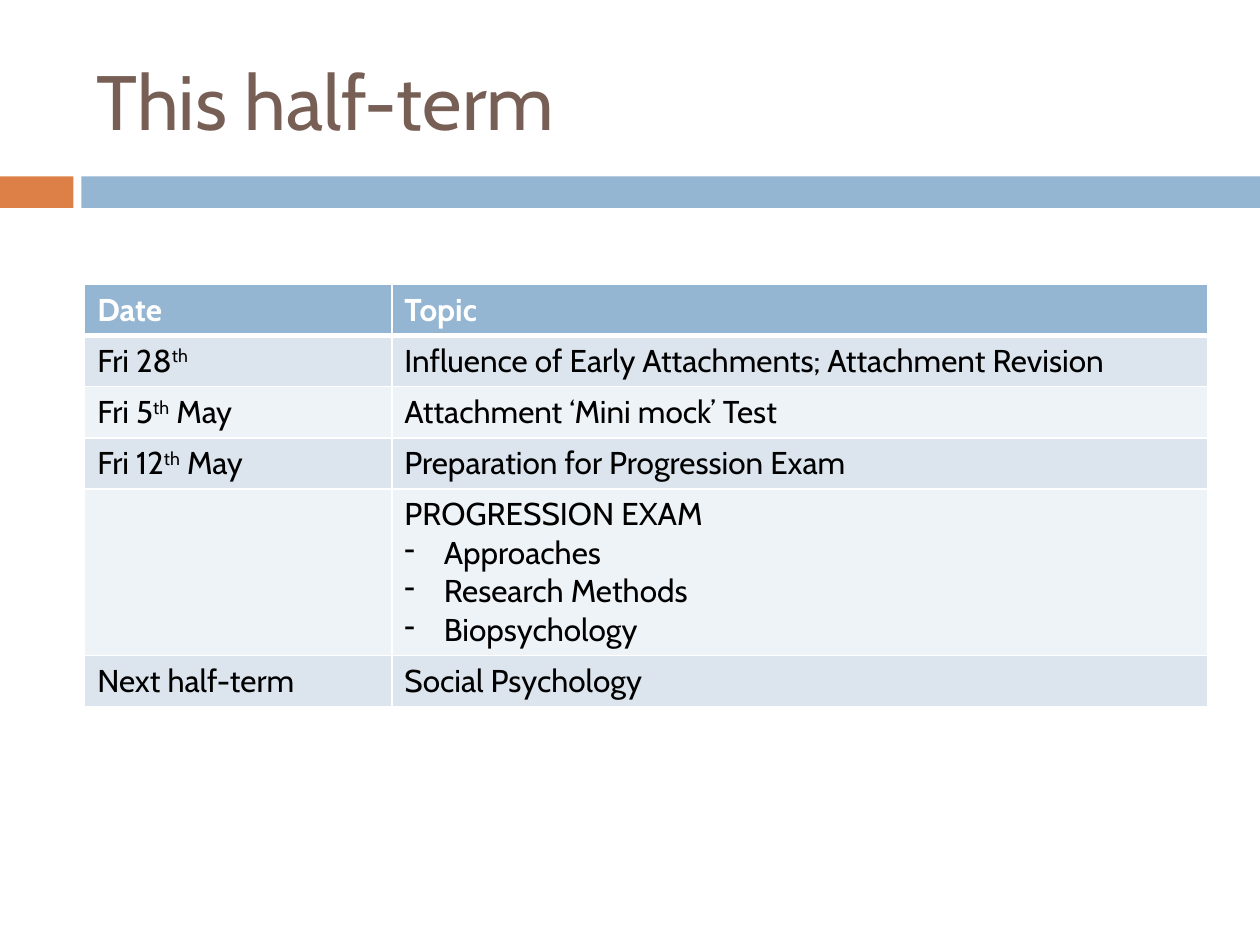
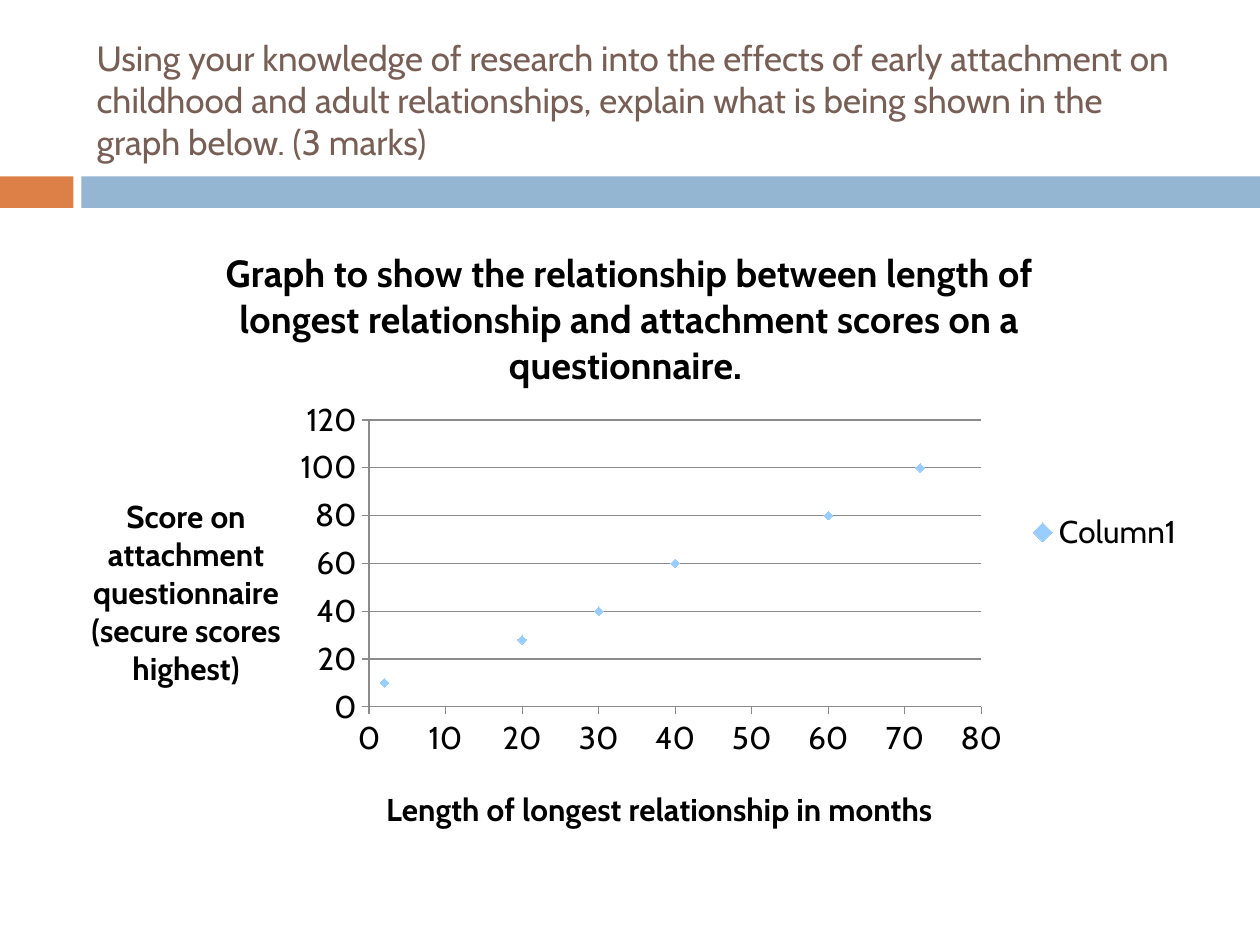
from lxml.etree import SubElement
from pptx import Presentation
from pptx.chart.data import XyChartData
from pptx.dml.color import RGBColor
from pptx.enum.chart import XL_CHART_TYPE, XL_LEGEND_POSITION, XL_MARKER_STYLE, XL_TICK_MARK
from pptx.enum.shapes import MSO_SHAPE
from pptx.enum.text import MSO_ANCHOR, MSO_AUTO_SIZE, PP_ALIGN
from pptx.oxml import parse_xml
from pptx.oxml.ns import nsdecls, qn
from pptx.util import Pt

FONT = "Cabin"
COLORS = {
    "title": "775F55", "orange": "DD8047", "blue": "94B6D2", "white": "FFFFFF",
    "black": "000000", "odd_row": "DCE5EE", "even_row": "EEF3F7",
    "grid": "8B8B8B", "marker": "99CCFF",
}

# Bands under the title: left, width, colour
BANDS = [(0, 42, "orange"), (46.5, 673.5, "blue")]
BAND_TOP, BAND_HEIGHT = 100.8, 18
TITLE_BOX = (48, 18, 642, 78)

# A pair of ^ marks encloses superscript; a leading "- " makes a dash item
TERM_TITLE = "This half-term"
TERM_ROWS = [
    ("Date", ["Topic"]),
    ("Fri 28^th^", ["Influence of Early Attachments; Attachment Revision"]),
    ("Fri 5^th^ May", ["Attachment ‘Mini mock’ Test"]),
    ("Fri 12^th^ May", ["Preparation for Progression Exam"]),
    ("", ["PROGRESSION EXAM", "- Approaches", "- Research Methods", "- Biopsychology"]),
    ("Next half-term", ["Social Psychology"]),
]
TABLE_LEFT, TABLE_TOP = 48.4, 162.6
COLUMN_WIDTHS = (175.5, 466.5)
LINE_HEIGHT, CELL_PADDING = 22, 7.2
DASH_INDENT = 22.5

QUESTION = (
    "Using your knowledge of research into the effects of early attachment on "
    "childhood and adult relationships, explain what is being shown in the graph "
    "below. (3 marks)"
)
CHART_BOX = (36, 126, 648, 356.4)
CHART_TITLE = (
    "Graph to show the relationship between length of longest relationship "
    "and attachment scores on a questionnaire. "
)
MONTHS_TITLE = "Length of longest relationship in months"
SCORE_TITLE = "Score on attachment questionnaire (secure scores highest)"
SERIES_NAME = "Column1"
POINTS = [(72, 100), (2, 10), (40, 60), (20, 28), (60, 80), (30, 40)]  # months, score
# Places inside the chart, as shares of its width and height
PLOT_PLACE = {"x": 0.27, "y": 0.32, "w": 0.54, "h": 0.46}
MONTHS_PLACE = {"x": 0.28, "y": 0.9}
SCORE_PLACE = {"x": 0.02, "y": 0.43}


def color(name):
    return RGBColor.from_string(COLORS[name])


def points(values):
    return [Pt(value) for value in values]


def write(para, text, size=18, fill="black", bold=False):
    """Add text to a paragraph, raising the parts between ^ marks."""
    for index, part in enumerate(text.split("^")):
        if not part:
            continue
        span = para.add_run()
        span.text = part
        span.font.name = FONT
        span.font.size = Pt(size)
        span.font.bold = bold
        span.font.color.rgb = color(fill)
        if index % 2:
            span.font._element.set("baseline", "30000")


def add_page(deck, title, size):
    page = deck.slides.add_slide(deck.slide_layouts[5])
    for left, width, fill in BANDS:
        band = page.shapes.add_shape(
            MSO_SHAPE.RECTANGLE, *points((left, BAND_TOP, width, BAND_HEIGHT)))
        band.shadow.inherit = False
        band.fill.solid()
        band.fill.fore_color.rgb = color(fill)
        band.line.fill.background()
    box = page.shapes.title
    box.left, box.top, box.width, box.height = points(TITLE_BOX)
    frame = box.text_frame
    frame.word_wrap = True
    frame.auto_size = MSO_AUTO_SIZE.NONE
    frame.vertical_anchor = MSO_ANCHOR.MIDDLE
    frame.paragraphs[0].alignment = PP_ALIGN.LEFT
    write(frame.paragraphs[0], title, size=size, fill="title")
    return page


def add_dash(para):
    properties = para._p.get_or_add_pPr()
    properties.set("marL", str(Pt(DASH_INDENT)))
    properties.set("indent", str(-Pt(DASH_INDENT)))
    SubElement(properties, qn("a:buChar")).set("char", "-")


def set_borders(cell, **widths):
    """Draw white borders; widths are keyed by side: L, R, T, B."""
    properties = cell._tc.get_or_add_tcPr()
    for index, side in enumerate("LRTB"):
        properties.insert(index, parse_xml(
            f'<a:ln{side} {nsdecls("a")} w="{Pt(widths.get(side, 1))}"><a:solidFill>'
            f'<a:srgbClr val="{COLORS["white"]}"/></a:solidFill></a:ln{side}>'))


def fill_cell(cell, lines, row_index):
    header = row_index == 0
    for index, line in enumerate(lines):
        frame = cell.text_frame
        para = frame.add_paragraph() if index else frame.paragraphs[0]
        if line.startswith("- "):
            add_dash(para)
        write(para, line.removeprefix("- "), bold=header, fill="white" if header else "black")
    cell.fill.solid()
    cell.fill.fore_color.rgb = color(
        "blue" if header else "odd_row" if row_index % 2 else "even_row")
    set_borders(cell, B=3 if header else 1, T=3 if row_index == 1 else 1)


def add_term_table(page):
    heights = [len(topics) * LINE_HEIGHT + CELL_PADDING for _, topics in TERM_ROWS]
    table = page.shapes.add_table(
        len(TERM_ROWS), len(COLUMN_WIDTHS),
        *points((TABLE_LEFT, TABLE_TOP, sum(COLUMN_WIDTHS), sum(heights)))).table
    for column, width in zip(table.columns, COLUMN_WIDTHS):
        column.width = Pt(width)
    for index, (date, topics) in enumerate(TERM_ROWS):
        table.rows[index].height = Pt(heights[index])
        fill_cell(table.cell(index, 0), [date], index)
        fill_cell(table.cell(index, 1), topics, index)


def place(element, shares, inner=False):
    """Fix the position of a chart part by shares of the chart size."""
    for old in element.findall(qn("c:layout")):
        element.remove(old)
    target = '<c:layoutTarget val="inner"/>' if inner else ""
    modes = "".join(f'<c:{key}Mode val="edge"/>' for key in "xy")
    values = "".join(f'<c:{key} val="{share}"/>' for key, share in shares.items())
    layout = parse_xml(
        f'<c:layout {nsdecls("c")}><c:manualLayout>{target}{modes}{values}'
        '</c:manualLayout></c:layout>')
    text = element.find(qn("c:tx"))
    element.insert(0 if text is None else element.index(text) + 1, layout)


def style_axis(axis, title, title_place, step, maximum):
    write(axis.axis_title.text_frame.paragraphs[0], title, bold=True)
    axis.axis_title.text_frame._txBody.bodyPr.set("rot", "0")
    place(axis.axis_title._element, title_place)
    axis.minimum_scale, axis.maximum_scale, axis.major_unit = 0, maximum, step
    axis.major_tick_mark = XL_TICK_MARK.OUTSIDE
    axis.minor_tick_mark = XL_TICK_MARK.NONE
    axis.format.line.color.rgb = color("grid")
    axis.format.line.width = Pt(0.75)


def add_score_chart(page):
    data = XyChartData()
    series_data = data.add_series(SERIES_NAME)
    for months, score in POINTS:
        series_data.add_data_point(months, score)
    chart = page.shapes.add_chart(
        XL_CHART_TYPE.XY_SCATTER, *points(CHART_BOX), data).chart
    chart.font.name = FONT
    chart.font.size = Pt(18)
    chart.font.color.rgb = color("black")
    write(chart.chart_title.text_frame.paragraphs[0], CHART_TITLE, size=21.6, bold=True)
    chart.has_legend = True
    chart.legend.position = XL_LEGEND_POSITION.RIGHT
    chart.legend.include_in_layout = False

    style_axis(chart.category_axis, MONTHS_TITLE, MONTHS_PLACE, step=10, maximum=80)
    style_axis(chart.value_axis, SCORE_TITLE, SCORE_PLACE, step=20, maximum=120)
    chart.category_axis.has_major_gridlines = False
    chart.value_axis.has_major_gridlines = True
    grid_line = chart.value_axis.major_gridlines.format.line
    grid_line.color.rgb = color("grid")
    grid_line.width = Pt(0.75)

    plot = chart.plots[0]
    plot.vary_by_categories = False
    place(chart._chartSpace.chart.plotArea, PLOT_PLACE, inner=True)
    series = plot.series[0]
    series.format.line.fill.background()
    series.marker.style = XL_MARKER_STYLE.DIAMOND
    series.marker.size = 5
    series.marker.format.fill.solid()
    series.marker.format.fill.fore_color.rgb = color("marker")
    series.marker.format.line.fill.background()


def main():
    deck = Presentation()
    deck.slide_width, deck.slide_height = Pt(720), Pt(540)
    add_term_table(add_page(deck, TERM_TITLE, size=44))
    add_score_chart(add_page(deck, QUESTION, size=20))
    deck.save("out.pptx")


if __name__ == "__main__":
    main()
